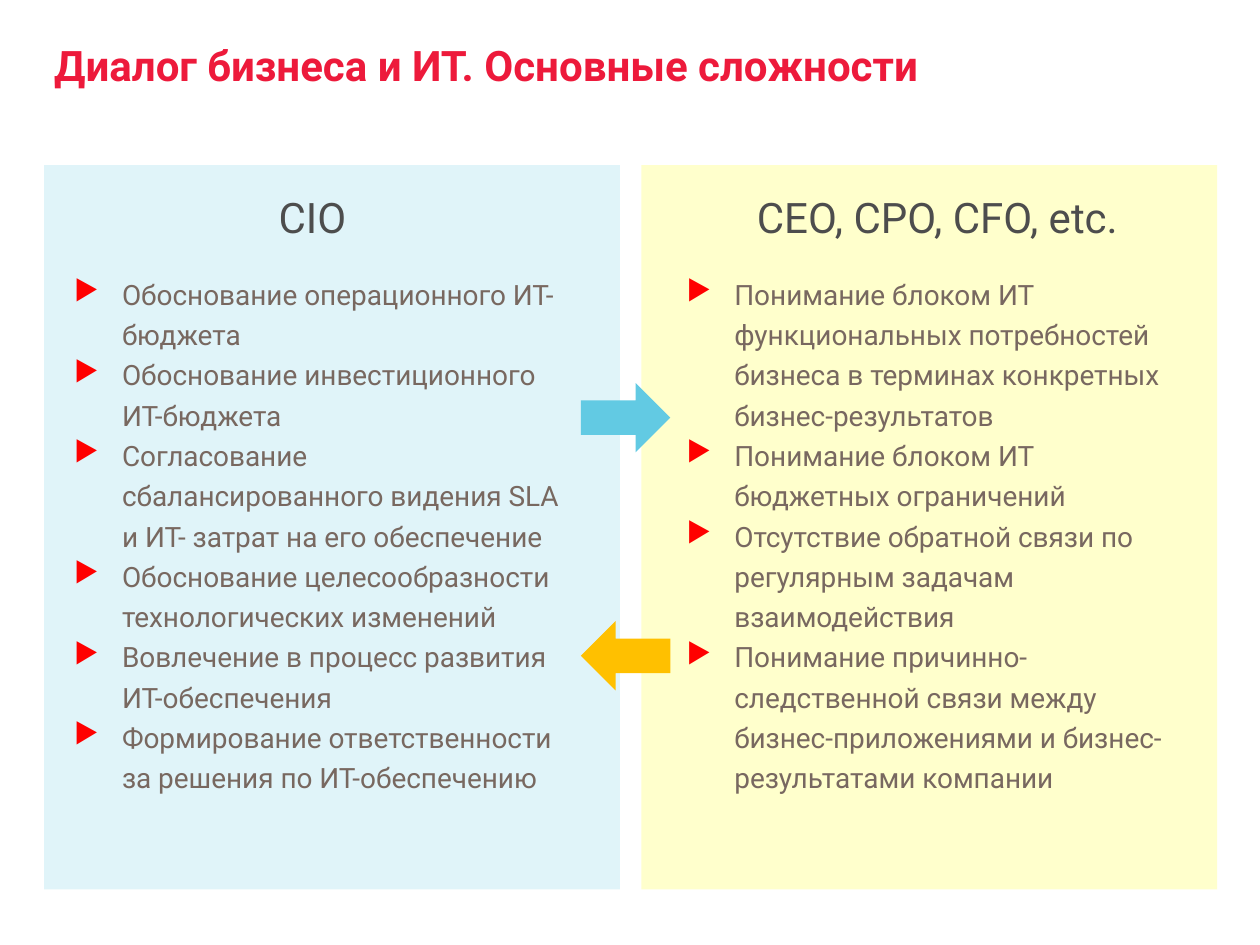
from lxml import etree
from pptx import Presentation
from pptx.dml.color import RGBColor
from pptx.enum.shapes import MSO_SHAPE as Shape
from pptx.enum.text import MSO_AUTO_SIZE as AutoSize, PP_ALIGN as Align
from pptx.oxml.ns import qn
from pptx.util import Inches, Pt

FONT = "Roboto"
COLORS = {
    "title": "ED1A3B",
    "heading": "4D4D4D",
    "body": "786860",
    "bullet": "FF0000",
    "cio_panel": "E0F4F9",
    "business_panel": "FFFFCC",
    "to_business": "62CAE3",
    "to_cio": "FFC000",
}
TITLE = "Диалог бизнеса и ИТ. Основные сложности"
CIO_ISSUES = [
    "Обоснование операционного ИТ-бюджета",
    "Обоснование инвестиционного ИТ-бюджета",
    "Согласование сбалансированного видения SLA и ИТ- затрат на его обеспечение",
    "Обоснование целесообразности технологических изменений",
    "Вовлечение в процесс развития ИТ-обеспечения",
    "Формирование ответственности за решения по ИТ-обеспечению",
]
BUSINESS_ISSUES = [
    "Понимание блоком ИТ функциональных потребностей бизнеса в терминах конкретных бизнес-результатов",
    "Понимание блоком ИТ бюджетных ограничений",
    "Отсутствие обратной связи по регулярным задачам взаимодействия",
    "Понимание причинно-следственной связи между бизнес-приложениями и бизнес-результатами компании",
]


def add_block(slide, preset, color, left, top, width, height, rotation=0):
    block = slide.shapes.add_shape(
        preset, Inches(left), Inches(top), Inches(width), Inches(height))
    block.shadow.inherit = False
    block.fill.solid()
    block.fill.fore_color.rgb = RGBColor.from_string(COLORS[color])
    block.line.fill.background()
    block.rotation = rotation


def add_text_frame(slide, left, top, width, height):
    frame = slide.shapes.add_textbox(
        Inches(left), Inches(top), Inches(width), Inches(height)).text_frame
    frame.word_wrap = True
    return frame


def add_run(paragraph, text, size, color, bold=False):
    run = paragraph.add_run()
    run.text = text
    run.font.name = FONT
    run.font.size = Pt(size)
    run.font.bold = bold
    run.font.color.rgb = RGBColor.from_string(COLORS[color])


def add_bullet(paragraph):
    """Give the paragraph a hanging red triangle."""
    properties = paragraph._p.get_or_add_pPr()
    properties.set("marL", str(Inches(0.38)))
    properties.set("indent", str(-Inches(0.38)))
    bullet_color = etree.SubElement(properties, qn("a:buClr"))
    etree.SubElement(bullet_color, qn("a:srgbClr"), val=COLORS["bullet"])
    etree.SubElement(properties, qn("a:buChar"), char="▶")


def add_title(slide):
    frame = add_text_frame(slide, 0.43, 0.29, 9.14, 0.7)
    frame.margin_left = frame.margin_right = 0
    frame.margin_top = frame.margin_bottom = 0
    title = frame.paragraphs[0]
    title.line_spacing = 1.05
    add_run(title, TITLE, 24, "title", bold=True)


def add_heading(slide, text, left, width):
    frame = add_text_frame(slide, left, 1.47, width, 0.5)
    frame.auto_size = AutoSize.SHAPE_TO_FIT_TEXT
    heading = frame.paragraphs[0]
    heading.alignment = Align.CENTER
    add_run(heading, text, 24, "heading")


def add_issues(slide, issues, left, width, height):
    frame = add_text_frame(slide, left, 2.1, width, height)
    for number, issue in enumerate(issues):
        paragraph = frame.add_paragraph() if number else frame.paragraphs[0]
        add_bullet(paragraph)
        paragraph.line_spacing = 1.2
        add_run(paragraph, issue, 16, "body")


def main():
    deck = Presentation()
    deck.slide_width, deck.slide_height = Inches(10), Inches(7.5)
    slide = deck.slides.add_slide(deck.slide_layouts[6])

    add_title(slide)
    for color, left in (("cio_panel", 0.35), ("business_panel", 5.09)):
        add_block(slide, Shape.RECTANGLE, color, left, 1.31, 4.57, 5.75)
    add_issues(slide, CIO_ISSUES, 0.49, 4.11, 4.54)
    add_heading(slide, "CIO", 1.3, 2.36)
    add_heading(slide, "CEO, CPO, CFO, etc.", 5.55, 3.78)
    add_issues(slide, BUSINESS_ISSUES, 5.35, 3.98, 3.94)
    for color, top, rotation in (("to_business", 3.04, 0), ("to_cio", 4.93, 180)):
        add_block(slide, Shape.RIGHT_ARROW, color, 4.61, top, 0.71, 0.55, rotation)

    deck.save("out.pptx")


if __name__ == "__main__":
    main()
